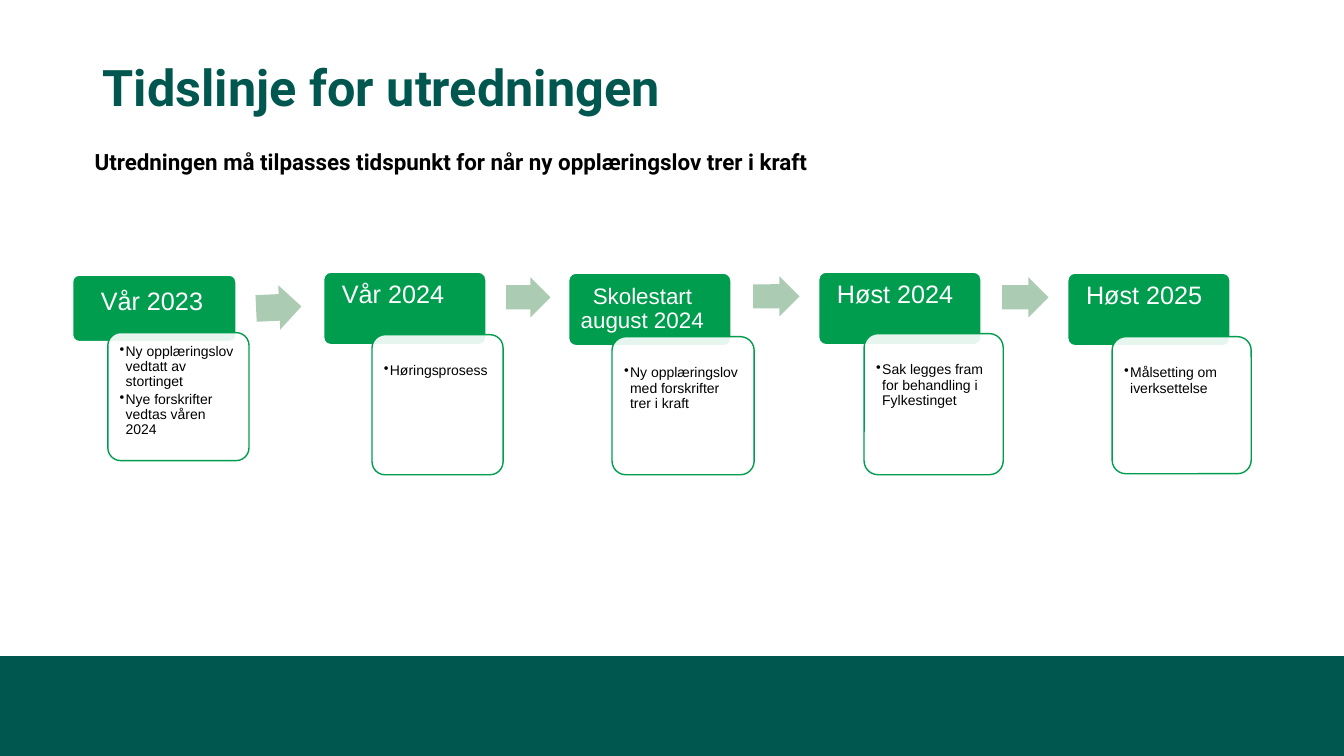
from dataclasses import dataclass
from typing import Optional

from lxml import etree
from pptx import Presentation
from pptx.dml.color import RGBColor
from pptx.enum.shapes import MSO_SHAPE
from pptx.enum.text import MSO_ANCHOR, PP_ALIGN
from pptx.oxml.ns import qn
from pptx.util import Inches, Pt

ROUNDED = MSO_SHAPE.ROUNDED_RECTANGLE
RIGHT_ARROW = MSO_SHAPE.RIGHT_ARROW
RECTANGLE = MSO_SHAPE.RECTANGLE
TOP, MIDDLE = MSO_ANCHOR.TOP, MSO_ANCHOR.MIDDLE
LEFT = PP_ALIGN.LEFT


@dataclass(frozen=True)
class Theme:
    dark_green: str = "00574F"
    green: str = "009D4F"
    pale_green: str = "ABCCB3"
    white: str = "FFFFFF"
    black: str = "000000"
    heading_font: str = "Roboto"
    step_font: str = "Arial"
    title_size: int = 36
    subtitle_size: int = 16
    detail_size: int = 10


@dataclass(frozen=True)
class Box:
    left: float
    top: float
    width: float
    height: float

    def emu(self) -> tuple:
        return tuple(Inches(v) for v in (self.left, self.top, self.width, self.height))


@dataclass(frozen=True)
class Step:
    heading: str
    details: tuple[str, ...]
    header: Box
    card: Box
    arrow: Optional[Box] = None
    arrow_turn: float = 0
    size: int = 18
    header_inset: float = 0.07
    header_indent: float = 0.09
    card_inset: float = 0.25


THEME = Theme()

STEPS = (
    Step("Vår 2023",
         ("Ny opplæringslov vedtatt av stortinget", "Nye forskrifter vedtas våren 2024"),
         Box(0.72, 2.73, 1.62, 0.66), Box(1.07, 3.3, 1.4, 1.27),
         Box(2.54, 2.83, 0.45, 0.44), -2.6,
         header_inset=0.12, header_indent=0.14, card_inset=0.08),
    Step("Vår 2024", ("Høringsprosess",),
         Box(3.21, 2.7, 1.61, 0.72), Box(3.69, 3.32, 1.3, 1.39),
         Box(5.02, 2.75, 0.44, 0.4), 0.1),
    Step("Skolestart august 2024", ("Ny opplæringslov med forskrifter trer i kraft",),
         Box(5.64, 2.71, 1.61, 0.72), Box(6.07, 3.34, 1.41, 1.37),
         Box(7.47, 2.74, 0.46, 0.4), -0.2,
         size=16, header_inset=0.1, header_indent=0.12),
    Step("Høst 2024", ("Sak legges fram for behandling i Fylkestinget",),
         Box(8.12, 2.7, 1.61, 0.72), Box(8.57, 3.31, 1.38, 1.4),
         Box(9.94, 2.75, 0.46, 0.4), 0.2),
    Step("Høst 2025", ("Målsetting om iverksettelse",),
         Box(10.59, 2.71, 1.61, 0.72), Box(11.03, 3.34, 1.38, 1.36)),
)


def set_font(paragraph, size: int, color: str, name: str, bold: bool = False) -> None:
    font = paragraph.font
    font.size, font.name, font.bold = Pt(size), name, bold
    font.color.rgb = RGBColor.from_string(color)


def add_shape(slide, kind, box: Box, fill: str, line: Optional[str] = None):
    shape = slide.shapes.add_shape(kind, *box.emu())
    shape.shadow.inherit = False
    shape.fill.solid()
    shape.fill.fore_color.rgb = RGBColor.from_string(fill)
    if line:
        shape.line.color.rgb = RGBColor.from_string(line)
        shape.line.width = Pt(1)
    else:
        shape.line.fill.background()
    return shape


def add_rounded(slide, box: Box, fill: str, line: str, side: float, top: float):
    shape = add_shape(slide, ROUNDED, box, fill, line)
    shape.adjustments[0] = 0.1
    frame = shape.text_frame
    frame.word_wrap = True
    frame.vertical_anchor = TOP
    frame.margin_left = frame.margin_right = Inches(side)
    frame.margin_top, frame.margin_bottom = Inches(top), Inches(0.05)
    return shape


def add_heading(slide, box: Box, text: str, size: int, color: str, anchor) -> None:
    frame = slide.shapes.add_textbox(*box.emu()).text_frame
    frame.word_wrap = True
    frame.vertical_anchor = anchor
    paragraph = frame.paragraphs[0]
    paragraph.text = text
    paragraph.line_spacing = 0.9
    set_font(paragraph, size, color, THEME.heading_font, bold=True)


def add_step(slide, step: Step) -> None:
    # Green header, first line indented
    header = add_rounded(slide, step.header, THEME.green, THEME.white,
                         step.header_inset, step.header_inset)
    heading = header.text_frame.paragraphs[0]
    heading.text = step.heading
    heading.alignment = LEFT
    heading.line_spacing = 0.9
    heading._p.get_or_add_pPr().set("indent", str(Inches(step.header_indent)))
    set_font(heading, step.size, THEME.white, THEME.step_font)

    # Slightly transparent card with bullets
    card = add_rounded(slide, step.card, THEME.white, THEME.green, 0.08, step.card_inset)
    card_color = card.fill._xPr.find(qn("a:solidFill"))[0]
    etree.SubElement(card_color, qn("a:alpha")).set("val", "90000")
    frame = card.text_frame
    for index, detail in enumerate(step.details):
        paragraph = frame.add_paragraph() if index else frame.paragraphs[0]
        paragraph.text = detail
        paragraph.alignment = LEFT
        paragraph.line_spacing = 0.9
        paragraph.space_after = Pt(1.5)
        properties = paragraph._p.get_or_add_pPr()
        properties.set("marL", str(Inches(0.06)))
        properties.set("indent", str(-Inches(0.06)))
        etree.SubElement(properties, qn("a:buChar")).set("char", "•")
        set_font(paragraph, THEME.detail_size, THEME.black, THEME.step_font)

    # Arrow to the next step
    if step.arrow:
        arrow = add_shape(slide, RIGHT_ARROW, step.arrow, THEME.pale_green)
        arrow.adjustments[0] = 0.6
        arrow.adjustments[1] = 0.5
        arrow.rotation = step.arrow_turn


def main() -> None:
    deck = Presentation()
    deck.slide_width, deck.slide_height = Inches(13.33), Inches(7.5)
    slide = deck.slides.add_slide(deck.slide_layouts[6])

    # Footer band
    add_shape(slide, RECTANGLE, Box(0, 6.51, 13.33, 0.99), THEME.dark_green)

    # Title and subtitle
    add_heading(slide, Box(0.92, 0.42, 11.5, 0.95), "Tidslinje for utredningen",
                THEME.title_size, THEME.dark_green, MIDDLE)
    add_heading(slide, Box(0.84, 1.45, 11.57, 4.52),
                "Utredningen må tilpasses tidspunkt for når ny opplæringslov trer i kraft",
                THEME.subtitle_size, THEME.black, TOP)

    # Timeline
    for step in STEPS:
        add_step(slide, step)

    deck.save("out.pptx")


if __name__ == "__main__":
    main()
